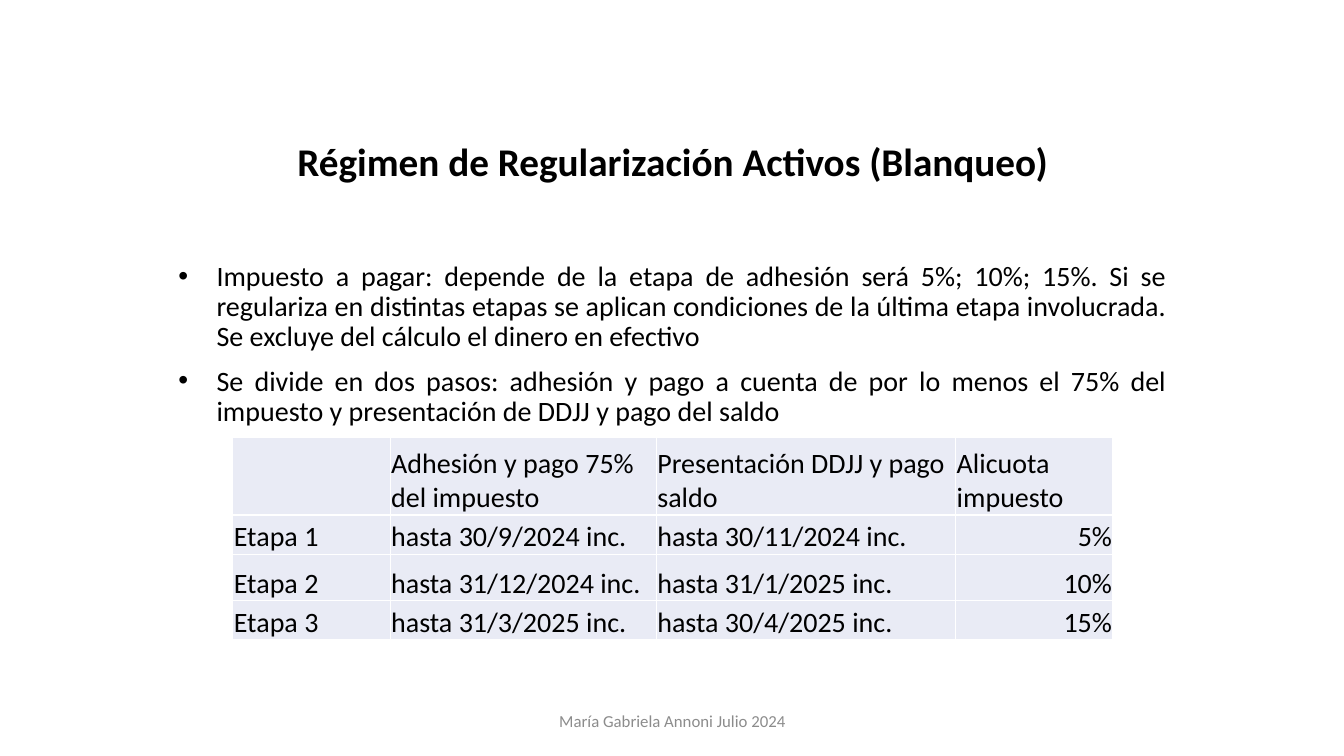
from dataclasses import dataclass

from lxml import etree
from pptx import Presentation
from pptx.dml.color import RGBColor
from pptx.enum.text import MSO_ANCHOR, PP_ALIGN
from pptx.oxml.ns import qn
from pptx.util import Inches, Pt

LEFT, CENTER, RIGHT, JUSTIFY = PP_ALIGN.LEFT, PP_ALIGN.CENTER, PP_ALIGN.RIGHT, PP_ALIGN.JUSTIFY
TOP, MIDDLE, BOTTOM = MSO_ANCHOR.TOP, MSO_ANCHOR.MIDDLE, MSO_ANCHOR.BOTTOM
BLACK = RGBColor(0x00, 0x00, 0x00)
GRAY = RGBColor(0x8C, 0x8C, 0x8C)
WHITE = RGBColor(0xFF, 0xFF, 0xFF)
LAVENDER = RGBColor(0xE9, 0xEB, 0xF5)
FONT = "Calibri"


@dataclass(frozen=True)
class Box:
    left: float
    top: float
    width: float
    height: float

    def inches(self) -> tuple:
        return tuple(Inches(v) for v in (self.left, self.top, self.width, self.height))


@dataclass(frozen=True)
class Stage:
    name: str
    adhesion: str
    filing: str
    rate: str


TITLE_BOX = Box(1.67, 1.23, 10, 0.66)
BODY_BOX = Box(1.67, 2.1, 10, 4.85)
FOOTER_BOX = Box(4.42, 6.95, 4.5, 0.4)
TABLE_BOX = Box(2.31, 4.34, 8.73, 2.01)
COL_WIDTHS = (1.56, 2.64, 2.97, 1.56)
ROW_HEIGHTS = (0.77, 0.39, 0.46, 0.39)

BULLETS = (
    "Impuesto a pagar: depende de la etapa de adhesión será 5%; 10%; 15%. Si se "
    "regulariza en distintas etapas se aplican condiciones de la última etapa "
    "involucrada. Se excluye del cálculo el dinero en efectivo",
    "Se divide en dos pasos: adhesión y pago a cuenta de por lo menos el 75% del "
    "impuesto y presentación de DDJJ y pago del saldo",
)
STAGES = (
    Stage("", "Adhesión y pago 75% del impuesto", "Presentación DDJJ y pago saldo", "Alicuota impuesto"),
    Stage("Etapa 1", "hasta 30/9/2024 inc.", "hasta 30/11/2024 inc.", "5%"),
    Stage("Etapa 2", "hasta 31/12/2024 inc.", "hasta 31/1/2025 inc.", "10%"),
    Stage("Etapa 3", "hasta 31/3/2025 inc.", "hasta 30/4/2025 inc.", "15%"),
)


def write(p, text: str, size: int, align=LEFT, color: RGBColor = BLACK, bold: bool = False) -> None:
    p.text = text
    p.alignment = align
    for r in p.runs:
        r.font.name = FONT
        r.font.size = Pt(size)
        r.font.bold = bold
        r.font.color.rgb = color


def add_bullet(p) -> None:
    pPr = p._p.get_or_add_pPr()
    pPr.set("marL", str(Inches(0.38)))
    pPr.set("indent", str(-Inches(0.38)))
    etree.SubElement(pPr, qn("a:buFont"), typeface="Arial")
    etree.SubElement(pPr, qn("a:buChar"), char="•")


def add_borders(cell) -> None:
    tcPr = cell._tc.get_or_add_tcPr()
    for i, side in enumerate(("a:lnL", "a:lnR", "a:lnT", "a:lnB")):
        ln = etree.Element(qn(side), w=str(Pt(1)))
        fill = etree.SubElement(ln, qn("a:solidFill"))
        etree.SubElement(fill, qn("a:srgbClr"), val=str(WHITE))
        tcPr.insert(i, ln)


def add_title(s) -> None:
    title = s.shapes.title
    title.left, title.top, title.width, title.height = TITLE_BOX.inches()
    tf = title.text_frame
    tf.word_wrap = True
    tf.vertical_anchor = BOTTOM
    p = tf.paragraphs[0]
    write(p, "Régimen de Regularización Activos (Blanqueo)", 28, CENTER, bold=True)
    p.line_spacing = 0.9


def add_text_box(s, box: Box, anchor):
    tf = s.shapes.add_textbox(*box.inches()).text_frame
    tf.word_wrap = True
    tf.vertical_anchor = anchor
    return tf


def add_body(s) -> None:
    tf = add_text_box(s, BODY_BOX, TOP)
    tf.margin_top = Inches(0.5)
    for i, text in enumerate(BULLETS):
        p = tf.add_paragraph() if i else tf.paragraphs[0]
        write(p, text, 20, JUSTIFY)
        p.line_spacing = 0.9
        p.space_before = Pt(10 if i else 0)
        add_bullet(p)


def add_stage_table(s) -> None:
    table = s.shapes.add_table(len(STAGES), len(COL_WIDTHS), *TABLE_BOX.inches()).table
    table.first_row = False
    table.horz_banding = False
    for col, width in zip(table.columns, COL_WIDTHS):
        col.width = Inches(width)
    for i, (row, height, stage) in enumerate(zip(table.rows, ROW_HEIGHTS, STAGES)):
        row.height = Inches(height)
        values = (stage.name, stage.adhesion, stage.filing, stage.rate)
        for j, (cell, text) in enumerate(zip(row.cells, values)):
            cell.margin_left = cell.margin_right = cell.margin_top = Inches(0.01)
            cell.margin_bottom = 0
            cell.vertical_anchor = BOTTOM
            cell.fill.solid()
            cell.fill.fore_color.rgb = LAVENDER
            add_borders(cell)
            align = RIGHT if i and j == len(values) - 1 else LEFT
            write(cell.text_frame.paragraphs[0], text, 20, align)


def main() -> None:
    prs = Presentation()
    prs.slide_width, prs.slide_height = Inches(13.33), Inches(7.5)
    s = prs.slides.add_slide(prs.slide_layouts[5])
    add_title(s)
    add_body(s)
    footer = add_text_box(s, FOOTER_BOX, MIDDLE)
    write(footer.paragraphs[0], "María Gabriela Annoni Julio 2024", 12, CENTER, GRAY)
    add_stage_table(s)
    prs.save("out.pptx")


if __name__ == "__main__":
    main()
